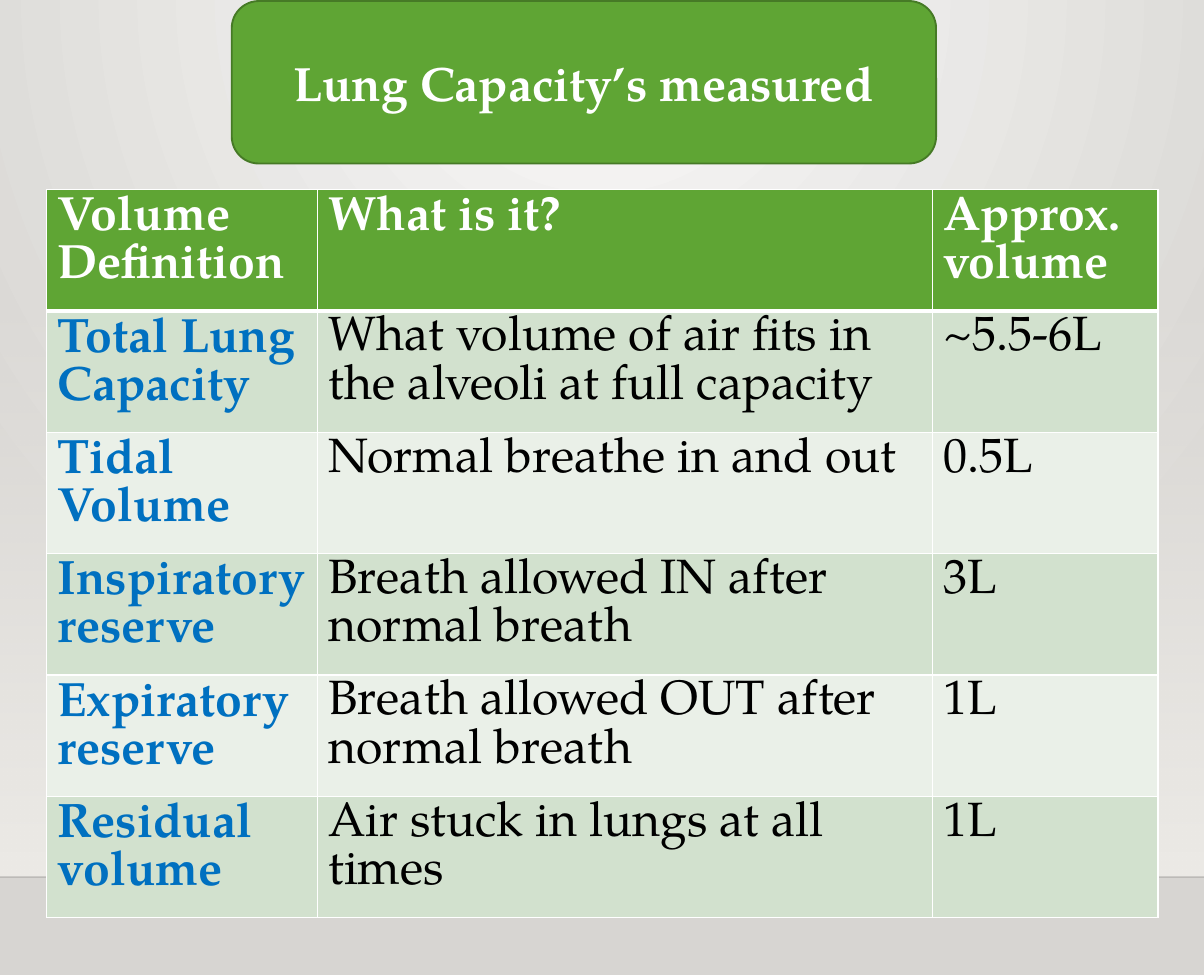
from typing import NamedTuple

from lxml.etree import SubElement
from pptx import Presentation
from pptx.dml.color import RGBColor
from pptx.enum.shapes import MSO_CONNECTOR, MSO_SHAPE
from pptx.enum.text import MSO_ANCHOR, PP_ALIGN
from pptx.oxml.ns import qn
from pptx.util import Pt

FONT = "TeX Gyre Pagella"
GREEN, WHITE, BLUE, BLACK = "5FA534", "FFFFFF", "0070C0", "000000"
BANDS = ("D2E1CE", "EAF0E8")
WIDTH, HEIGHT = 800, 648
FLOOR_Y = 583


class Volume(NamedTuple):
    name: str
    meaning: str
    amount: str


HEADER = Volume("Volume Definition", "What is it?", "Approx. volume")
VOLUMES = [
    Volume("Total Lung Capacity", "What volume of air fits in the alveoli at full capacity", "~5.5-6L"),
    Volume("Tidal Volume", "Normal breathe in and out", "0.5L"),
    Volume("Inspiratory reserve", "Breath allowed IN after normal breath", "3L"),
    Volume("Expiratory reserve", "Breath allowed OUT after normal breath", "1L"),
    Volume("Residual volume", "Air stuck in lungs at all times", "1L"),
]


def rgb(value: str) -> RGBColor:
    return RGBColor.from_string(value)


def write(tf, text: str, *, color: str, bold: bool = False, size: float = 32,
          align=PP_ALIGN.LEFT, spacing: float | None = None) -> None:
    p = tf.paragraphs[0]
    p.alignment = align
    if spacing:
        p.line_spacing = Pt(spacing)
    r = p.add_run()
    r.text = text
    r.font.name, r.font.size, r.font.bold = FONT, Pt(size), bold
    r.font.color.rgb = rgb(color)


def set_gradient(fill, start: str, end: str) -> None:
    fill.gradient()
    for stop, color, position in zip(fill.gradient_stops, (start, end), (0, 1)):
        stop.color.rgb = rgb(color)
        stop.position = position


def set_alpha(color_element, percent: int) -> None:
    SubElement(color_element, qn("a:alpha"), val=str(percent * 1000))


def draw_background(s) -> None:
    set_gradient(s.background.fill, "FAFAF9", "D7D5D2")
    grad = s.element.find(".//" + qn("a:gradFill"))
    grad.remove(grad.find(qn("a:lin")))
    circle = SubElement(grad, qn("a:path"), path="circle")
    SubElement(circle, qn("a:fillToRect"), l="43000", t="0", r="43000", b="100000")

    wall = s.shapes.add_shape(MSO_SHAPE.RECTANGLE, 0, Pt(191), Pt(WIDTH), Pt(FLOOR_Y - 191))
    wall.shadow.inherit = False
    wall.line.fill.background()
    set_gradient(wall.fill, "EDEBE7", "EDEBE7")
    wall.fill.gradient_angle = 270
    set_alpha(wall.element.find(".//" + qn("a:srgbClr")), 0)

    edge = s.shapes.add_connector(MSO_CONNECTOR.STRAIGHT, 0, Pt(FLOOR_Y), Pt(WIDTH), Pt(FLOOR_Y))
    edge.line.width = Pt(1)
    edge.line.color.rgb = rgb("000001")
    set_alpha(edge.element.find(".//" + qn("a:srgbClr")), 20)
    SubElement(edge.element.spPr, qn("a:effectLst"))


def draw_title(s, text: str) -> None:
    box = Pt(154), Pt(0.72), Pt(468), Pt(108)
    sp = s.shapes.add_shape(MSO_SHAPE.ROUNDED_RECTANGLE, *box)
    sp.shadow.inherit = False
    sp.fill.solid()
    sp.fill.fore_color.rgb = rgb(GREEN)
    sp.line.color.rgb = rgb("467A26")
    sp.line.width = Pt(1.25)

    title = s.shapes.title
    title.left, title.top, title.width, title.height = box
    title.text_frame.vertical_anchor = MSO_ANCHOR.MIDDLE
    write(title.text_frame, text, color=WHITE, bold=True, align=PP_ALIGN.CENTER)
    sp.element.addnext(title.element)


def set_borders(cell, top: float, bottom: float) -> None:
    tc_pr = cell._tc.get_or_add_tcPr()
    for side, width in (("L", 1), ("R", 1), ("T", top), ("B", bottom)):
        ln = SubElement(tc_pr, qn(f"a:ln{side}"), w=str(Pt(width)))
        SubElement(SubElement(ln, qn("a:solidFill")), qn("a:srgbClr"), val=WHITE)


def draw_table(s, header: Volume, volumes: list[Volume]) -> None:
    widths, row_height = (180, 408.5, 150), 80.65
    rows = [header, *volumes]
    frame = s.shapes.add_table(len(rows), len(widths), Pt(31), Pt(126),
                               Pt(sum(widths)), Pt(row_height * len(rows)))
    table = frame.table
    for column, width in zip(table.columns, widths):
        column.width = Pt(width)
    for i, row in enumerate(rows):
        table.rows[i].height = Pt(row_height)
        for j, text in enumerate(row):
            cell = table.cell(i, j)
            set_borders(cell, top=3 if i == 1 else 1, bottom=3 if i == 0 else 1)
            cell.fill.solid()
            cell.fill.fore_color.rgb = rgb(BANDS[(i - 1) % 2] if i else GREEN)
            color = WHITE if i == 0 else BLUE if j == 0 else BLACK
            write(cell.text_frame, text, color=color, bold=i == 0 or j == 0, spacing=32)


def main() -> None:
    prs = Presentation()
    prs.slide_width, prs.slide_height = Pt(WIDTH), Pt(HEIGHT)
    s = prs.slides.add_slide(prs.slide_layouts[5])
    draw_background(s)
    draw_title(s, "Lung Capacity’s measured")
    draw_table(s, HEADER, VOLUMES)
    prs.save("out.pptx")


if __name__ == "__main__":
    main()
